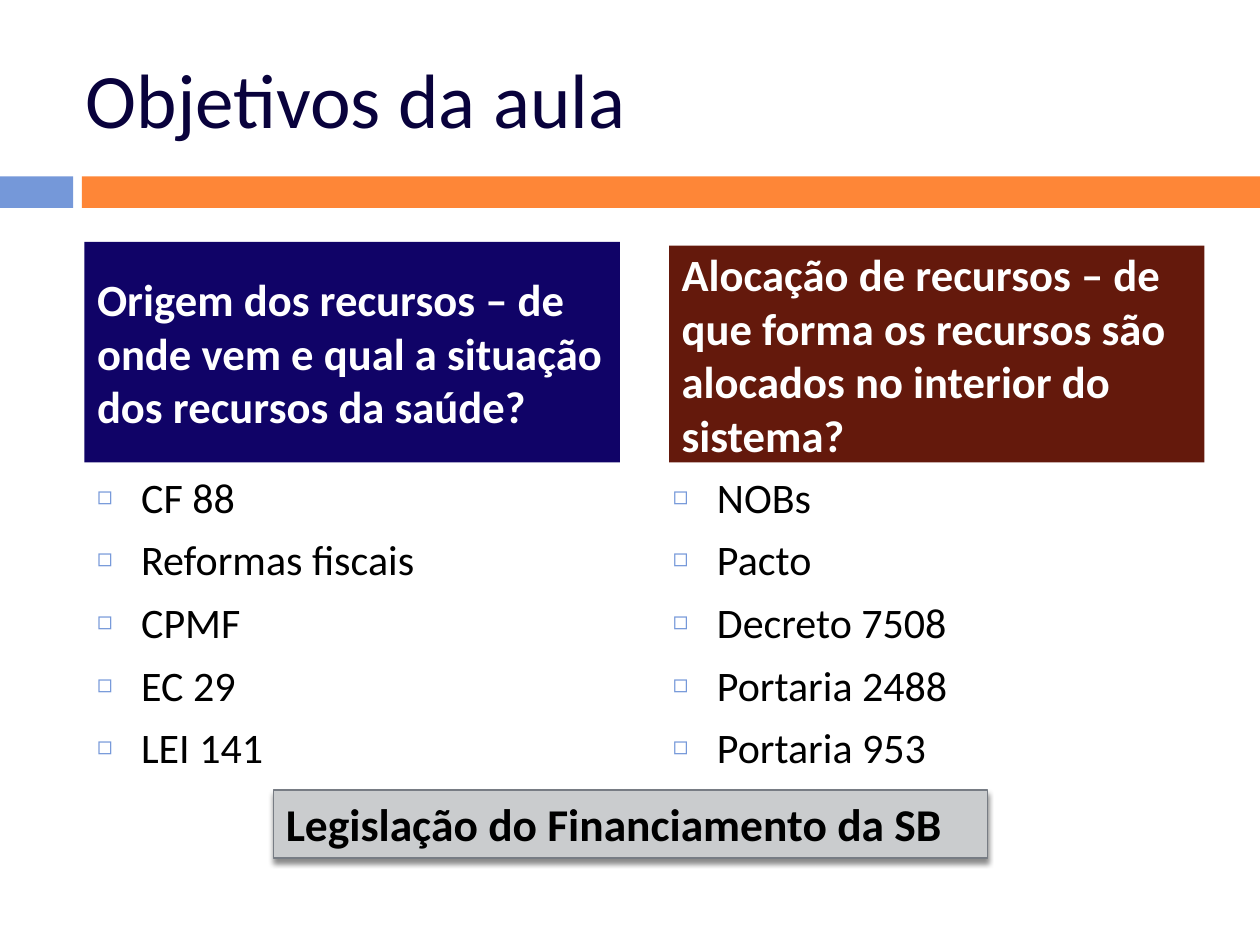
import pptx
import pptx.dml.color
import pptx.enum.shapes
import pptx.enum.text
import pptx.oxml
import pptx.oxml.ns
import pptx.util

RGBColor = pptx.dml.color.RGBColor
Anchor = pptx.enum.text.MSO_ANCHOR
RECTANGLE = pptx.enum.shapes.MSO_SHAPE.RECTANGLE

BLUE = RGBColor(0x75, 0x98, 0xD9)
ORANGE = RGBColor(0xFE, 0x86, 0x37)
TITLE_NAVY = RGBColor(0x09, 0x02, 0x3C)
NAVY = RGBColor(0x10, 0x03, 0x67)
MAROON = RGBColor(0x64, 0x19, 0x0C)
GREY = RGBColor(0xCA, 0xCC, 0xCE)
LINE_GREY = RGBColor(0x77, 0x7C, 0x84)
BLACK = RGBColor(0, 0, 0)
WHITE = RGBColor(0xFF, 0xFF, 0xFF)

COLUMNS, ROWS = 100, 75
CELL = pptx.util.Inches(0.1)

TITLE_FORMAT = {"size": pptx.util.Pt(44), "bold": False}
HEADING_FORMAT = {"size": pptx.util.Pt(25.5), "bold": True}
LIST_FORMAT = {"size": pptx.util.Pt(24), "bold": False}
BANNER_FORMAT = {"size": pptx.util.Pt(26), "bold": True}

LEFT_ITEMS = ["CF 88", "Reformas fiscais", "CPMF", "EC 29", "LEI 141"]
RIGHT_ITEMS = ["NOBs", "Pacto", "Decreto 7508", "Portaria 2488", "Portaria 953"]


def cells(box):
    """Turn left, top, width, height in grid cells into lengths."""
    return [round(value * CELL) for value in box]


def place(shape, box):
    shape.left, shape.top, shape.width, shape.height = cells(box)


def write(shape, lines, text_format, color, anchor, space_before=0):
    frame = shape.text_frame
    frame.text = "\n".join(lines)
    frame.word_wrap = True
    frame.auto_size = pptx.enum.text.MSO_AUTO_SIZE.NONE
    frame.vertical_anchor = anchor
    for paragraph in frame.paragraphs:
        paragraph.alignment = pptx.enum.text.PP_ALIGN.LEFT
        paragraph.space_before = pptx.util.Pt(space_before)
        font = paragraph.runs[0].font
        for name, value in {"name": "Calibri", **text_format}.items():
            setattr(font, name, value)
        font.color.rgb = color


def add_xml(parent, xml):
    namespace = pptx.oxml.ns.nsdecls("a")
    parent.append(pptx.oxml.parse_xml(xml.replace(" ", f" {namespace} ", 1)))


def add_bullets(shape):
    indent = round(3.5 * CELL)
    for paragraph in shape.text_frame.paragraphs:
        properties = paragraph._p.get_or_add_pPr()
        properties.set("marL", str(indent))
        properties.set("indent", str(-indent))
        add_xml(properties, f'<a:buClr ><a:srgbClr val="{BLUE}"/></a:buClr>')
        add_xml(properties, '<a:buSzPct val="60000"/>')
        add_xml(properties, '<a:buChar char="◻"/>')


def add_rectangle(slide, box, color):
    shape = slide.shapes.add_shape(RECTANGLE, *cells(box))
    shape.shadow.inherit = False
    shape.fill.solid()
    shape.fill.fore_color.rgb = color
    shape.line.fill.background()
    return shape


def add_header(slide, box):
    left, top, width, height = box
    band_top, band_height = top + 14, 2.5
    accent_width, bar_left = 5.8, 6.5
    add_rectangle(slide, (left, band_top, accent_width, band_height), BLUE)
    add_rectangle(slide, (left + bar_left, band_top, width - bar_left, band_height), ORANGE)
    title = slide.shapes.title
    place(title, (left + accent_width, top + 3, width - 10.8, 9.5))
    write(title, ["Objetivos da aula"], TITLE_FORMAT, TITLE_NAVY, Anchor.MIDDLE)


def add_topic(slide, box, heading_index, heading, color, items, heading_height, list_shift=0):
    """Fill a column: a coloured question above its bulleted list."""
    left, top, width, height = box
    question = slide.placeholders[heading_index]
    place(question, (left, top, width, heading_height))
    question.fill.solid()
    question.fill.fore_color.rgb = color
    write(question, [heading], HEADING_FORMAT, WHITE, Anchor.MIDDLE, 7)

    answers = slide.placeholders[heading_index + 1]
    list_top = heading_height + 0.2
    place(answers, (left + list_shift, top + list_top, width, height - list_top))
    write(answers, items, LIST_FORMAT, BLACK, Anchor.TOP, 7)
    add_bullets(answers)


def add_banner(slide, box):
    banner = add_rectangle(slide, box, GREY)
    banner.line.color.rgb = LINE_GREY
    banner.line.width = pptx.util.Pt(0.79)
    write(banner, ["Legislação do Financiamento da SB"], BANNER_FORMAT, BLACK, Anchor.TOP)
    effects = banner._element.spPr.find(pptx.oxml.ns.qn("a:effectLst"))
    blur, distance = pptx.util.Pt(3), pptx.util.Pt(2.4)
    add_xml(effects, f'<a:outerShdw blurRad="{blur}" dist="{distance}" dir="5400000" rotWithShape="0">'
                     '<a:srgbClr val="000000"><a:alpha val="45000"/></a:srgbClr></a:outerShdw>')


def main():
    presentation = pptx.Presentation()
    presentation.slide_width = COLUMNS * CELL
    presentation.slide_height = ROWS * CELL
    comparison = presentation.slide_layouts.get_by_name("Comparison")
    slide = presentation.slides.add_slide(comparison)

    add_header(slide, (0, 0, COLUMNS, 16.5))
    add_topic(slide, (6.7, 19.2, 42.5, 46.6), 1,
              "Origem dos recursos – de onde vem e qual a situação dos recursos da saúde?",
              NAVY, LEFT_ITEMS, heading_height=17.5)
    add_topic(slide, (53.1, 19.5, 42.5, 45.5), 3,
              "Alocação de recursos – de que forma os recursos são alocados no interior do sistema?",
              MAROON, RIGHT_ITEMS, heading_height=17.2, list_shift=-0.7)
    add_banner(slide, (21.7, 62.7, 56.7, 5.4))
    presentation.save("out.pptx")


if __name__ == "__main__":
    main()
